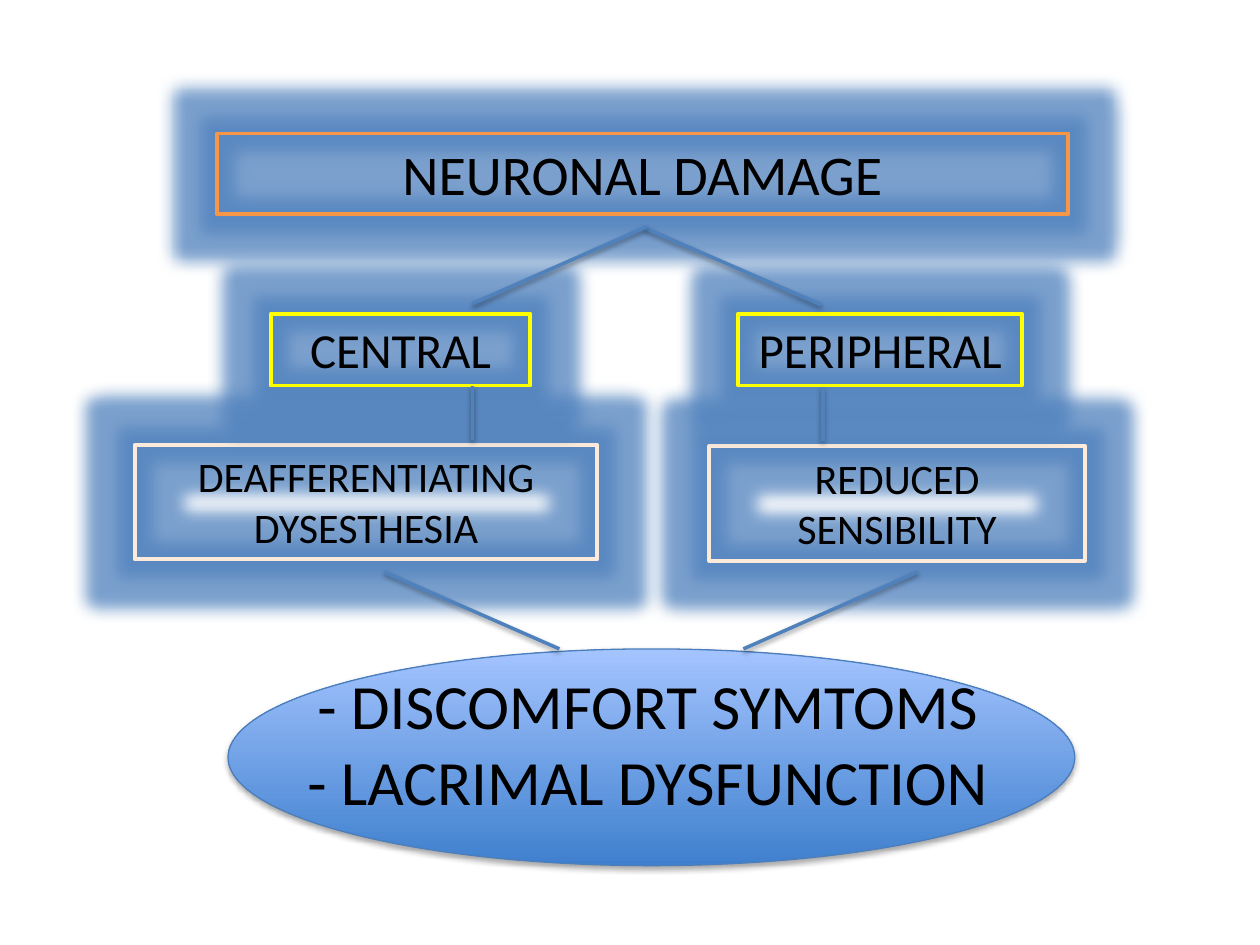
from lxml import etree
from pptx import Presentation, util as u
from pptx.dml.color import RGBColor
from pptx.enum import shapes, text
from pptx.oxml.ns import qn

PX = 9144
FONT = "Calibri"
COLORS = {
    "text": "000000", "shadow": "000000", "glow": "4F81BD", "connector": "4F81BD",
    "top": "F79646", "branch": "FFFF00", "effect": "FDEADA",
    "ellipse_bottom": "3F80CE", "ellipse_top": "A4C4FF", "ellipse_line": "4B7EBC",
}

ELLIPSE = (181, 515, 672, 172)
BOXES = [
    ("NEURONAL DAMAGE", (172, 106, 676, 64), 32, "top"),
    ("DEAFFERENTIATING DYSESTHESIA", (107, 353, 367, 91), 24, "effect"),
    ("REDUCED SENSIBILITY", (563, 354, 298, 91), 24, "effect"),
    ("CENTRAL", (215, 249, 206, 57), 28, "branch"),
    ("PERIPHERAL", (586, 249, 225, 57), 28, "branch"),
]
OUTCOMES = ["- DISCOMFORT SYMTOMS", "- LACRIMAL DYSFUNCTION"]
OUTCOME_AREA = (137, 524, 754, 131)
UPPER_LINES = [
    (512, 181, 652, 242), (513, 180, 375, 241),
    (653, 307, 653, 350), (375, 306, 375, 349),
]
LOWER_LINES = [(728, 454, 590, 515), (305, 454, 444, 515)]


def emu(lengths):
    return [length * PX for length in lengths]


def color(name):
    return RGBColor.from_string(COLORS[name])


def add_effect(shape, kind, name, opacity, **attributes):
    properties = shape._element.spPr
    for old in properties.findall(qn("a:effectLst")):
        properties.remove(old)
    effects = etree.SubElement(properties, qn("a:effectLst"))
    effect = etree.SubElement(effects, qn("a:" + kind),
                              {key: str(value) for key, value in attributes.items()})
    tint = etree.SubElement(effect, qn("a:srgbClr"), val=COLORS[name])
    etree.SubElement(tint, qn("a:alpha"), val=str(opacity * 1000))


def add_shadow(shape, opacity, distance):
    add_effect(shape, "outerShdw", "shadow", opacity, blurRad=u.Pt(3.1),
               dist=u.Pt(distance), dir=90 * 60000, rotWithShape=0)


def add_text(slide, area, lines, size):
    shape = slide.shapes.add_textbox(*emu(area))
    frame = shape.text_frame
    frame.word_wrap = True
    frame.auto_size = text.MSO_AUTO_SIZE.SHAPE_TO_FIT_TEXT
    for index, line in enumerate(lines):
        paragraph = frame.add_paragraph() if index else frame.paragraphs[0]
        paragraph.alignment = text.PP_ALIGN.CENTER
        run = paragraph.add_run()
        run.text = line
        run.font.name = FONT
        run.font.size = u.Pt(size)
        run.font.color.rgb = color("text")
    return shape


def add_box(slide, label, area, size, border):
    box = add_text(slide, area, [label], size)
    box.line.color.rgb = color(border)
    box.line.width = u.Pt(2.25)
    add_effect(box, "glow", "glow", 75, rad=u.Pt(18))


def add_ellipse(slide):
    ellipse = slide.shapes.add_shape(shapes.MSO_SHAPE.OVAL, *emu(ELLIPSE))
    ellipse.fill.gradient()
    ellipse.fill.gradient_angle = 90
    for stop, name in zip(ellipse.fill.gradient_stops, ("ellipse_bottom", "ellipse_top")):
        stop.color.rgb = color(name)
    ellipse.line.color.rgb = color("ellipse_line")
    ellipse.line.width = u.Pt(0.75)
    add_shadow(ellipse, 35, 1.8)


def add_lines(slide, lines):
    for ends in lines:
        connector = slide.shapes.add_connector(shapes.MSO_CONNECTOR.STRAIGHT, *emu(ends))
        connector.line.color.rgb = color("connector")
        connector.line.width = u.Pt(2)
        add_shadow(connector, 38, 1.6)


def main():
    presentation = Presentation()
    presentation.slide_width, presentation.slide_height = emu((1000, 750))
    slide = presentation.slides.add_slide(presentation.slide_layouts[6])
    add_ellipse(slide)
    for box in BOXES:
        add_box(slide, *box)
    add_lines(slide, UPPER_LINES)
    add_text(slide, OUTCOME_AREA, OUTCOMES, 36)
    add_lines(slide, LOWER_LINES)
    presentation.save("out.pptx")


if __name__ == "__main__":
    main()
